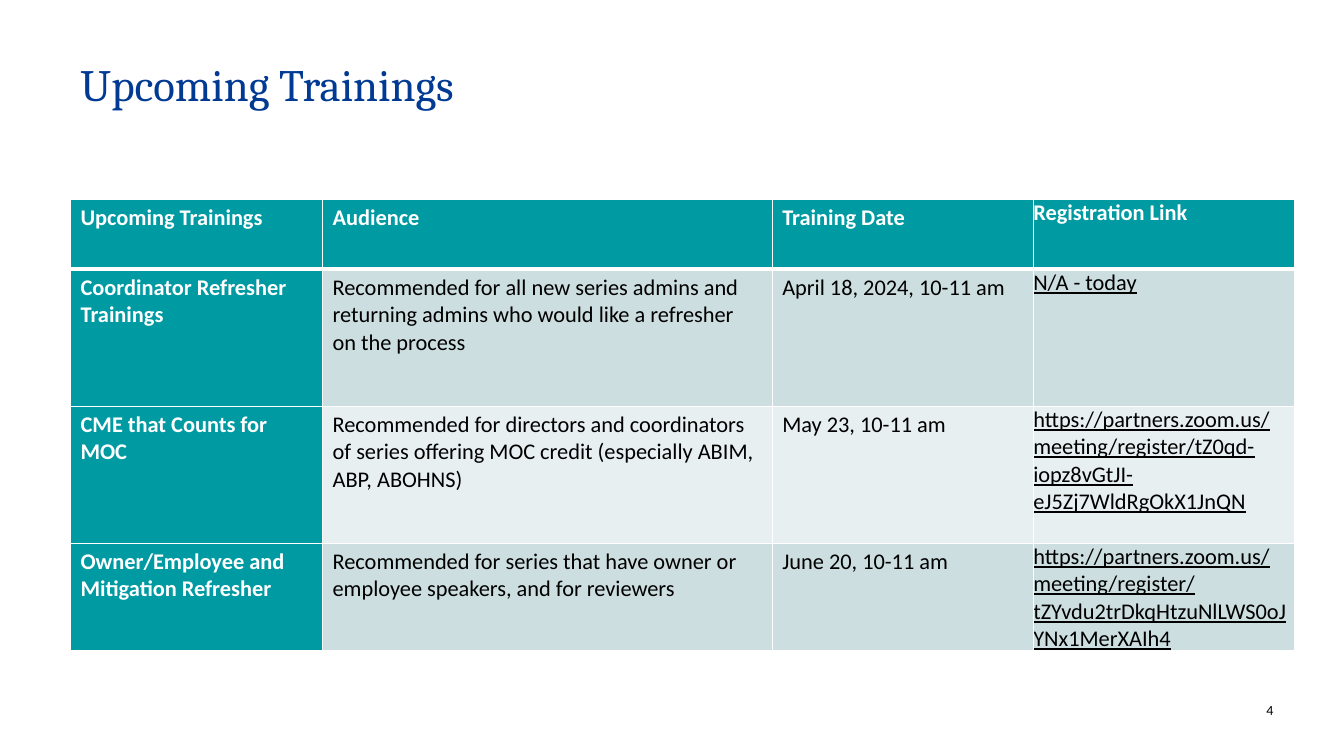
from lxml.etree import SubElement
from pptx import Presentation
from pptx.dml.color import RGBColor
from pptx.enum.text import MSO_ANCHOR, PP_ALIGN
from pptx.oxml import parse_xml
from pptx.oxml.ns import nsdecls
from pptx.util import Inches, Pt

WHITE = RGBColor(0xFF, 0xFF, 0xFF)
BLACK = RGBColor(0x00, 0x00, 0x00)
NAVY = RGBColor(0x00, 0x3A, 0x93)
TEAL = RGBColor(0x00, 0x9A, 0xA3)
BAND_DARK = RGBColor(0xCC, 0xDE, 0xE0)
BAND_LIGHT = RGBColor(0xE7, 0xEF, 0xF0)

# Table sizes in percent of the slide's width and height
COLUMN_SHARES = (18.75, 33.46, 19.43, 19.43)
ROW_SHARES = (9.2, 18.13, 18.13, 13.07)
LINK_COLUMN = 3

TRAININGS = (
    ("Upcoming Trainings", "Audience", "Training Date", "Registration Link"),
    ("Coordinator Refresher Trainings",
     "Recommended for all new series admins and returning admins who would "
     "like a refresher on the process",
     "April 18, 2024, 10-11 am",
     "N/A - today"),
    ("CME that Counts for MOC",
     "Recommended for directors and coordinators of series offering MOC "
     "credit (especially ABIM, ABP, ABOHNS)",
     "May 23, 10-11 am",
     "https://partners.zoom.us/meeting/register/tZ0qd-iopz8vGtJI-eJ5Zj7WldRgOkX1JnQN"),
    ("Owner/Employee and Mitigation Refresher",
     "Recommended for series that have owner or employee speakers, and for "
     "reviewers",
     "June 20, 10-11 am",
     "https://partners.zoom.us/meeting/register/tZYvdu2trDkqHtzuNlLWS0oJYNx1MerXAIh4"),
)


class TrainingSlide:
    """Draws on one slide; all places are percent of its size."""

    heading_font = "Cambria"
    body_font = "Calibri"

    def __init__(self, deck):
        self.width, self.height = deck.slide_width, deck.slide_height
        self.slide = deck.slides.add_slide(deck.slide_layouts[6])

    def across(self, share):
        return round(self.width * share / 100)

    def down(self, share):
        return round(self.height * share / 100)

    def style(self, paragraph, face, size, color, bold=False, underline=False):
        font = paragraph.font
        font.name, font.size, font.color.rgb = face, Pt(size), color
        font.bold, font.underline = bold, underline

    def text(self, wording, left, top, width, height):
        """Adds a wrapped text box and returns its frame."""
        frame = self.slide.shapes.add_textbox(
            self.across(left), self.down(top),
            self.across(width), self.down(height)).text_frame
        frame.word_wrap = True
        frame.vertical_anchor = MSO_ANCHOR.TOP
        frame.text = wording
        return frame

    def title(self, wording):
        heading = self.text(wording, 5.25, 7.6, 89.42, 14).paragraphs[0]
        heading.line_spacing = 0.9
        self.style(heading, self.heading_font, 32, NAVY)

    def page_number(self, number):
        frame = self.text(number, 91.9, 92.8, 2.85, 2.27)
        frame.margin_left = frame.margin_right = 0
        frame.margin_top = frame.margin_bottom = 0
        frame.paragraphs[0].alignment = PP_ALIGN.RIGHT
        self.style(frame.paragraphs[0], self.body_font, 10, BLACK)

    def borders(self, cell, top, bottom):
        """Draws white cell borders; top and bottom are widths in points."""
        properties = cell._tc.get_or_add_tcPr()
        sides = (("L", 1), ("R", 1), ("T", top), ("B", bottom))
        for place, (side, points) in enumerate(sides):
            line = parse_xml(f'<a:ln{side} {nsdecls("a")} w="{Pt(points)}"/>')
            fill = SubElement(line, line.tag.replace(f"ln{side}", "solidFill"))
            SubElement(fill, fill.tag.replace("solidFill", "srgbClr"),
                       val=str(WHITE))
            properties.insert(place, line)

    def cell(self, cell, wording, row, column):
        strong = row == 0 or column == 0
        is_link = column == LINK_COLUMN
        cell.text = wording
        cell.vertical_anchor = MSO_ANCHOR.TOP
        if is_link:
            cell.margin_left = cell.margin_right = 0
            cell.margin_top = cell.margin_bottom = 0
        self.style(cell.text_frame.paragraphs[0], self.body_font, 16,
                   WHITE if strong else BLACK, bold=strong,
                   underline=is_link and not strong)
        cell.fill.solid()
        band = BAND_DARK if row % 2 else BAND_LIGHT
        cell.fill.fore_color.rgb = TEAL if strong else band
        self.borders(cell, top=3 if row == 1 else 1, bottom=3 if row == 0 else 1)

    def table(self, rows, left, top):
        table = self.slide.shapes.add_table(
            len(rows), len(COLUMN_SHARES), self.across(left), self.down(top),
            self.across(sum(COLUMN_SHARES)), self.down(sum(ROW_SHARES))).table
        for column, share in zip(table.columns, COLUMN_SHARES):
            column.width = self.across(share)
        for row, share in zip(table.rows, ROW_SHARES):
            row.height = self.down(share)
        for row, wordings in enumerate(rows):
            for column, wording in enumerate(wordings):
                self.cell(table.cell(row, column), wording, row, column)


def main():
    deck = Presentation()
    deck.slide_width, deck.slide_height = Inches(13.33), Inches(7.5)
    trainings = TrainingSlide(deck)
    trainings.page_number("4")
    trainings.table(TRAININGS, left=5.25, top=26.4)
    trainings.title("Upcoming Trainings")
    deck.save("out.pptx")


if __name__ == "__main__":
    main()
